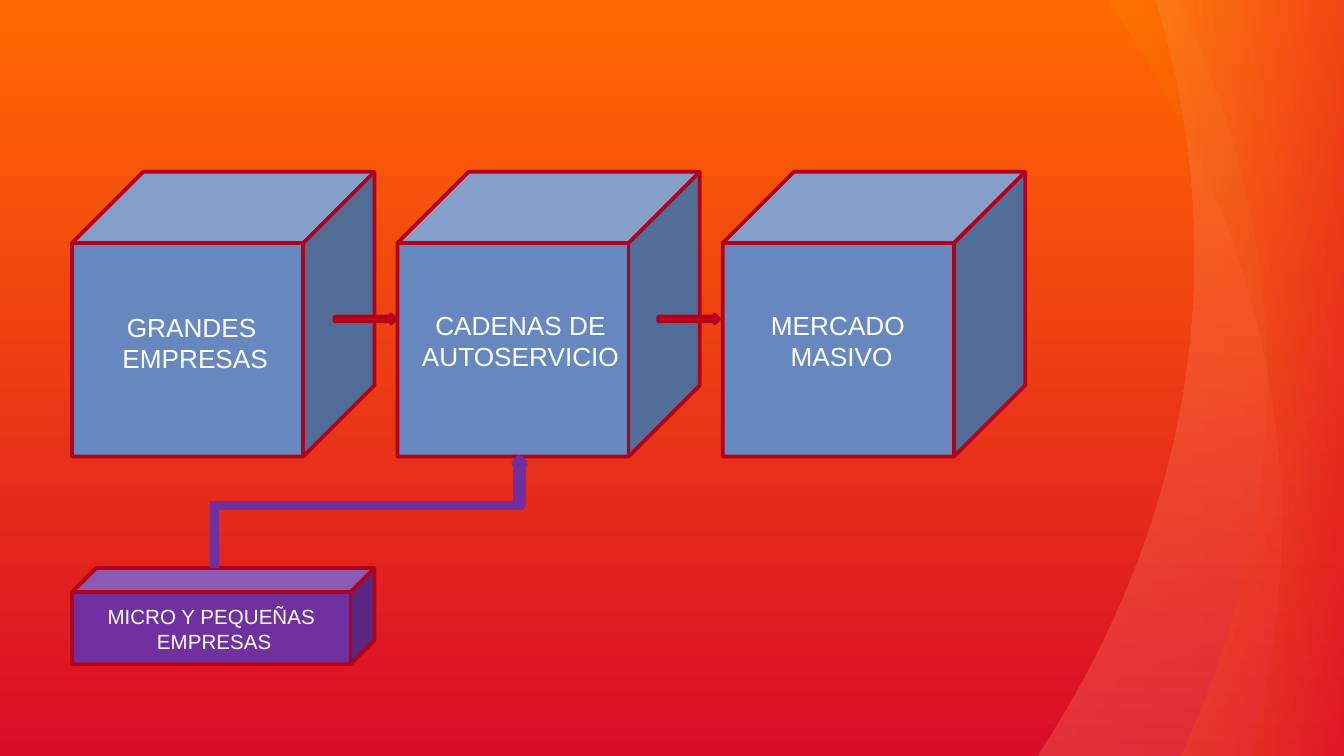
from lxml.etree import SubElement
from pptx import Presentation
from pptx.dml.color import RGBColor
from pptx.enum.shapes import MSO_CONNECTOR, MSO_SHAPE
from pptx.enum.text import MSO_AUTO_SIZE, PP_ALIGN
from pptx.oxml.ns import qn
from pptx.util import Pt

COLORS = {
    "orange": "FF6A00", "crimson": "DA0C28", "peach": "FFC486", "coral": "FF866B",
    "red": "F20122", "amber": "FF9F00", "dark red": "CC0000", "blue": "6788BF",
    "outline": "B30119", "purple": "7030A0", "white": "FFFFFF",
}
RGB = {name: RGBColor.from_string(value) for name, value in COLORS.items()}
WIDTH, HEIGHT = 720, 405
BAND_BOTTOM = 406


def set_gradient(fill, names, angle, opacity=100):
    fill.gradient()
    fill.gradient_angle = angle
    for stop, name in zip(fill.gradient_stops, names):
        stop.color.rgb = RGB[name]
    if opacity < 100:
        for color in fill._fill._gradFill.iter(qn("a:srgbClr")):
            SubElement(color, qn("a:alpha")).set("val", str(opacity * 1000))


def add_block(kind, left, top, width, height, fill, line, weight):
    block = slide.shapes.add_shape(kind, Pt(left), Pt(top), Pt(width), Pt(height))
    block.shadow.inherit = False
    if fill:
        block.fill.solid()
        block.fill.fore_color.rgb = RGB[fill]
    else:
        block.fill.background()
    block.line.color.rgb = RGB[line]
    block.line.width = Pt(weight)


presentation = Presentation()
presentation.slide_width, presentation.slide_height = Pt(WIDTH), Pt(HEIGHT)
slide = presentation.slides.add_slide(presentation.slide_layouts[6])
set_gradient(slide.background.fill, ("orange", "crimson"), 270)

# Curved bands: a start on the bottom edge, then two cubic curves to the top edge
bands = [
    (("peach", "coral"), (555.1, BAND_BOTTOM), [
        [(609.8, 324), (640.1, 232.6), (640.1, 136.8)],
        [(640.1, 90), (632.9, 43.9), (619.2, 0)]]),
    (("orange", "red"), (632.2, BAND_BOTTOM), [
        [(662.4, 342), (679, 273.6), (679, 203)],
        [(679, 132.5), (662.4, 64.1), (631.4, 0)]]),
    (("amber", "dark red"), (668.9, BAND_BOTTOM), [
        [(680.4, 365.8), (686.9, 324), (686.9, 280.8)],
        [(686.9, 180.7), (653, 85.7), (593.3, 0)]]),
]
for names, start, curves in bands:
    corners = [curve[-1] for curve in curves] + [(WIDTH, 0), (WIDTH, BAND_BOTTOM)]
    builder = slide.shapes.build_freeform(*map(Pt, start))
    builder.add_line_segments([(Pt(x), Pt(y)) for x, y in corners], close=True)
    band = builder.convert_to_shape()
    band.shadow.inherit = False
    band.line.fill.background()
    set_gradient(band.fill, names, 0, opacity=20)
    edges = list(band._element.iter(qn("a:lnTo")))
    for edge, curve in zip(edges, curves):
        bend = edge.makeelement(qn("a:cubicBezTo"))
        for x, y in curve:
            point = SubElement(bend, qn("a:pt"))
            point.set("x", str(Pt(x) - band.left))
            point.set("y", str(Pt(y) - band.top))
        edge.getparent().replace(edge, bend)

# Supply chain: three large cubes and the small firms below
for column in range(3):
    add_block(MSO_SHAPE.CUBE, 38.6 + column * 174.3, 92, 162, 152.6, "blue", "outline", 2)
for column in range(2):
    add_block(MSO_SHAPE.RIGHT_ARROW, 179.3 + column * 173.3, 168.4, 32.7, 5,
              "red", "outline", 2)
add_block(MSO_SHAPE.CUBE, 38.6, 304.3, 162, 51.6, "purple", "outline", 2)

labels = [
    (("GRANDES ", "EMPRESAS"), 57.8, 163.2, 93.6, 41, 14),
    (("CADENAS DE", "AUTOSERVICIO"), 218, 162, 121.7, 41, 14),
    (("MERCADO ", "MASIVO"), 405.5, 162, 90.7, 41, 14),
    (("MICRO Y PEQUEÑAS ", "EMPRESAS"), 49.6, 320.2, 130.3, 33.8, 11),
]
for lines, left, top, width, height, size in labels:
    label = slide.shapes.add_textbox(Pt(left), Pt(top), Pt(width), Pt(height))
    frame = label.text_frame
    frame.word_wrap = False
    frame.auto_size = MSO_AUTO_SIZE.SHAPE_TO_FIT_TEXT
    frame.text = "\n".join(lines)
    for paragraph in frame.paragraphs:
        paragraph.alignment = PP_ALIGN.CENTER
        for run in paragraph.runs:
            run.font.name = "Arial"
            run.font.size = Pt(size)
            run.font.color.rgb = RGB["white"]

# Route from the small firms up to the retail chains
for route in [(114.8, 304.3, 114.8, 273), (112.5, 270.8, 278.6, 270.8)]:
    link = slide.shapes.add_connector(MSO_CONNECTOR.STRAIGHT, *map(Pt, route))
    link.line.color.rgb = RGB["purple"]
    link.line.width = Pt(5)
    SubElement(link._element.spPr, qn("a:effectLst"))
add_block(MSO_SHAPE.UP_ARROW, 276.5, 246.4, 3.6, 24.4, None, "purple", 5)

presentation.save("out.pptx")
